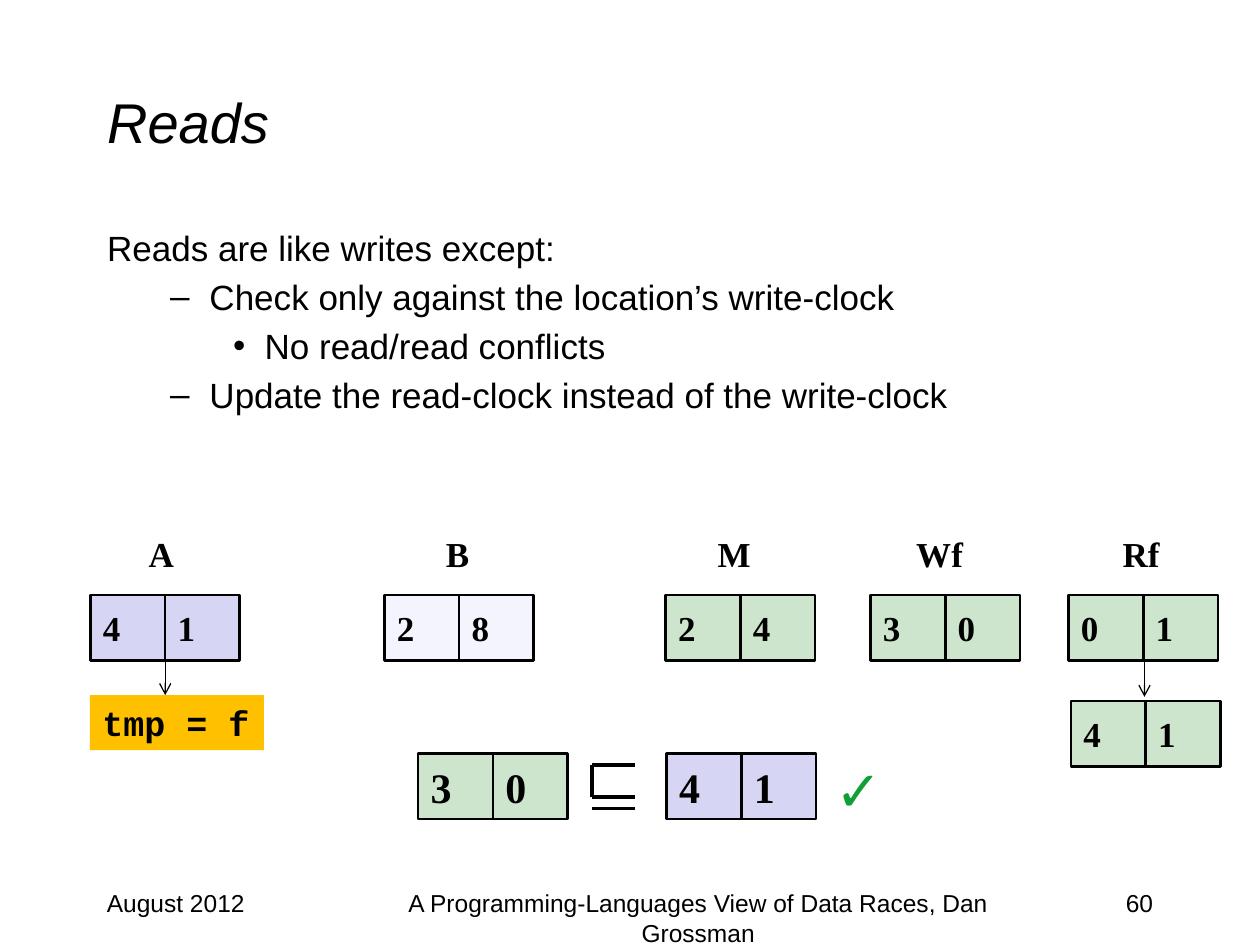
from dataclasses import dataclass

from lxml.etree import SubElement
from pptx import Presentation
from pptx.dml.color import RGBColor
from pptx.enum.shapes import MSO_CONNECTOR, MSO_SHAPE
from pptx.enum.text import MSO_ANCHOR, MSO_AUTO_SIZE, PP_ALIGN
from pptx.oxml.ns import qn
from pptx.util import Pt

BLACK = RGBColor(0x00, 0x00, 0x00)
BLUE = RGBColor(0x33, 0x33, 0xCC)
LAVENDER = RGBColor(0xCC, 0xCC, 0xFF)
GREEN = RGBColor(0x00, 0x80, 0x00)
AMBER = RGBColor(0xFF, 0xC0, 0x00)
CHECK_GREEN = RGBColor(0x11, 0x9F, 0x33)

SANS = "Arial"
SERIF = "Times New Roman"
MONO = "Courier New"

CELL_W, CELL_H = 42.7, 37.5
CLOCK_TOP = 340
CHECK_TOP = 430.6
LABEL_TOP, LABEL_H = 300.5, 31.5
FOOTER_TOP, FOOTER_H = 504, 36


@dataclass(frozen=True)
class Clock:
    left: float
    top: float
    values: tuple[int, int]
    color: RGBColor
    size: int = 20


@dataclass(frozen=True)
class Label:
    text: str
    left: float
    top: float
    width: float
    height: float
    size: int = 20
    font: str = SERIF
    bold: bool = True
    color: RGBColor = BLACK
    align: PP_ALIGN = PP_ALIGN.LEFT
    anchor: MSO_ANCHOR = MSO_ANCHOR.MIDDLE
    wrap: bool = False


CLOCKS = [
    Clock(51.7, CLOCK_TOP, (4, 1), BLUE),
    Clock(219.7, CLOCK_TOP, (2, 8), LAVENDER),
    Clock(380.4, CLOCK_TOP, (2, 4), GREEN),
    Clock(497.5, CLOCK_TOP, (3, 0), GREEN),
    Clock(610.6, CLOCK_TOP, (0, 1), GREEN),
    Clock(612, 400.6, (4, 1), GREEN),
    Clock(239, CHECK_TOP, (3, 0), GREEN, 24),
    Clock(381, CHECK_TOP, (4, 1), BLUE, 24),
]

LABELS = [
    Label("A", 77.8, LABEL_TOP, 29.5, LABEL_H),
    Label("B", 247.7, LABEL_TOP, 28, LABEL_H),
    Label("M", 403, LABEL_TOP, 34, LABEL_H),
    Label("Wf", 516.5, LABEL_TOP, 41.5, LABEL_H),
    Label("Rf", 634.4, LABEL_TOP, 36, LABEL_H),
    Label("✓", 470.2, 428.4, 39.6, 46, 32, SANS, False, CHECK_GREEN,
          anchor=MSO_ANCHOR.TOP),
    Label("August 2012", 54, FOOTER_TOP, 150, FOOTER_H, 14, SANS, False,
          anchor=MSO_ANCHOR.TOP, wrap=True),
    Label("A Programming-Languages View of Data Races, Dan Grossman",
          198, FOOTER_TOP, 402, FOOTER_H, 14, SANS, False,
          align=PP_ALIGN.CENTER, anchor=MSO_ANCHOR.TOP, wrap=True),
    Label("60", 516, FOOTER_TOP, 150, FOOTER_H, 14, SANS, False,
          align=PP_ALIGN.RIGHT, anchor=MSO_ANCHOR.TOP, wrap=True),
]

READ_ACTION = Label("tmp = f", 51.4, 397.2, 99.4, 31.5, font=MONO)

BULLETS = [
    ("Reads are like writes except:", 0),
    ("Check only against the location’s write-clock", 1),
    ("No read/read conflicts", 2),
    ("Update the read-clock instead of the write-clock", 1),
]

LEFT, RIGHT = 338.4, 363
TOP, MIDDLE, BOTTOM = 437.3, 455.6, 462
SUBSET_STROKES = [
    (LEFT, TOP, RIGHT, TOP),
    (LEFT, TOP, LEFT, MIDDLE),
    (LEFT, MIDDLE, RIGHT, MIDDLE),
    (LEFT, BOTTOM, RIGHT, BOTTOM),
]

ARROWS = [(94.4, 377.4, 94.4, 397.2), (654, 378.2, 654, 398.2)]


def write(sp, label: Label) -> None:
    tf = sp.text_frame
    tf.word_wrap = label.wrap
    tf.vertical_anchor = label.anchor
    p = tf.paragraphs[0]
    p.text = label.text
    p.alignment = label.align
    p.font.name = label.font
    p.font.size = Pt(label.size)
    p.font.bold = label.bold
    p.font.color.rgb = label.color


def add_label(shapes, label: Label) -> None:
    sp = shapes.add_textbox(Pt(label.left), Pt(label.top),
                            Pt(label.width), Pt(label.height))
    write(sp, label)


def add_box(shapes, label: Label, color: RGBColor):
    sp = shapes.add_shape(MSO_SHAPE.RECTANGLE, Pt(label.left), Pt(label.top),
                          Pt(label.width), Pt(label.height))
    sp.shadow.inherit = False
    sp.fill.solid()
    sp.fill.fore_color.rgb = color
    sp.line.fill.background()
    write(sp, label)
    return sp


def add_clock(shapes, clock: Clock) -> None:
    group = shapes.add_group_shape()
    for i, value in enumerate(clock.values):
        cell = Label(str(value), clock.left + i * CELL_W, clock.top,
                     CELL_W, CELL_H, clock.size)
        sp = add_box(group.shapes, cell, clock.color)
        color = sp.element.spPr.find(qn("a:solidFill")).find(qn("a:srgbClr"))
        SubElement(color, qn("a:alpha"), val="20000")
        sp.line.color.rgb = BLACK
        sp.line.width = Pt(1.5)


def add_line(shapes, ends: tuple[float, float, float, float], width: float,
             arrow: bool = False) -> None:
    cxn = shapes.add_connector(MSO_CONNECTOR.STRAIGHT, *map(Pt, ends))
    cxn.line.color.rgb = BLACK
    cxn.line.width = Pt(width)
    if arrow:
        SubElement(cxn.line._get_or_add_ln(), qn("a:tailEnd"), type="arrow")
    SubElement(cxn.element.spPr, qn("a:effectLst"))


def place(sp, left: float, top: float, width: float, height: float) -> None:
    sp.left, sp.top, sp.width, sp.height = map(Pt, (left, top, width, height))
    sp.text_frame.auto_size = MSO_AUTO_SIZE.NONE


def fill_title(sp) -> None:
    place(sp, 54, 24, 612, 90)
    sp.text_frame.vertical_anchor = MSO_ANCHOR.MIDDLE
    p = sp.text_frame.paragraphs[0]
    p.text = "Reads"
    p.alignment = PP_ALIGN.LEFT
    p.font.name = SANS
    p.font.size = Pt(32)
    p.font.italic = True
    p.font.color.rgb = BLACK


def fill_body(sp) -> None:
    place(sp, 54, 126, 612, 354)
    tf = sp.text_frame
    for i, (text, level) in enumerate(BULLETS):
        p = tf.add_paragraph() if i else tf.paragraphs[0]
        p.text = text
        p.level = level
        p.font.name = SANS
        p.font.size = Pt(20)
        p.font.color.rgb = BLACK
        if level == 0:
            pPr = p._p.get_or_add_pPr()
            pPr.set("marL", "0")
            pPr.set("indent", "0")
            pPr.insert_element_before(pPr.makeelement(qn("a:buNone")),
                                      "a:tabLst", "a:defRPr", "a:extLst")


def main() -> None:
    prs = Presentation()
    prs.slide_width, prs.slide_height = Pt(720), Pt(540)
    s = prs.slides.add_slide(prs.slide_layouts[1])
    fill_title(s.shapes.title)
    fill_body(s.placeholders[1])
    for clock in CLOCKS:
        add_clock(s.shapes, clock)
    for label in LABELS:
        add_label(s.shapes, label)
    add_box(s.shapes, READ_ACTION, AMBER)
    for ends in ARROWS:
        add_line(s.shapes, ends, 0.75, arrow=True)
    subset = s.shapes.add_group_shape()
    for ends in SUBSET_STROKES:
        add_line(subset.shapes, ends, 2.25)
    prs.save("out.pptx")


if __name__ == "__main__":
    main()
